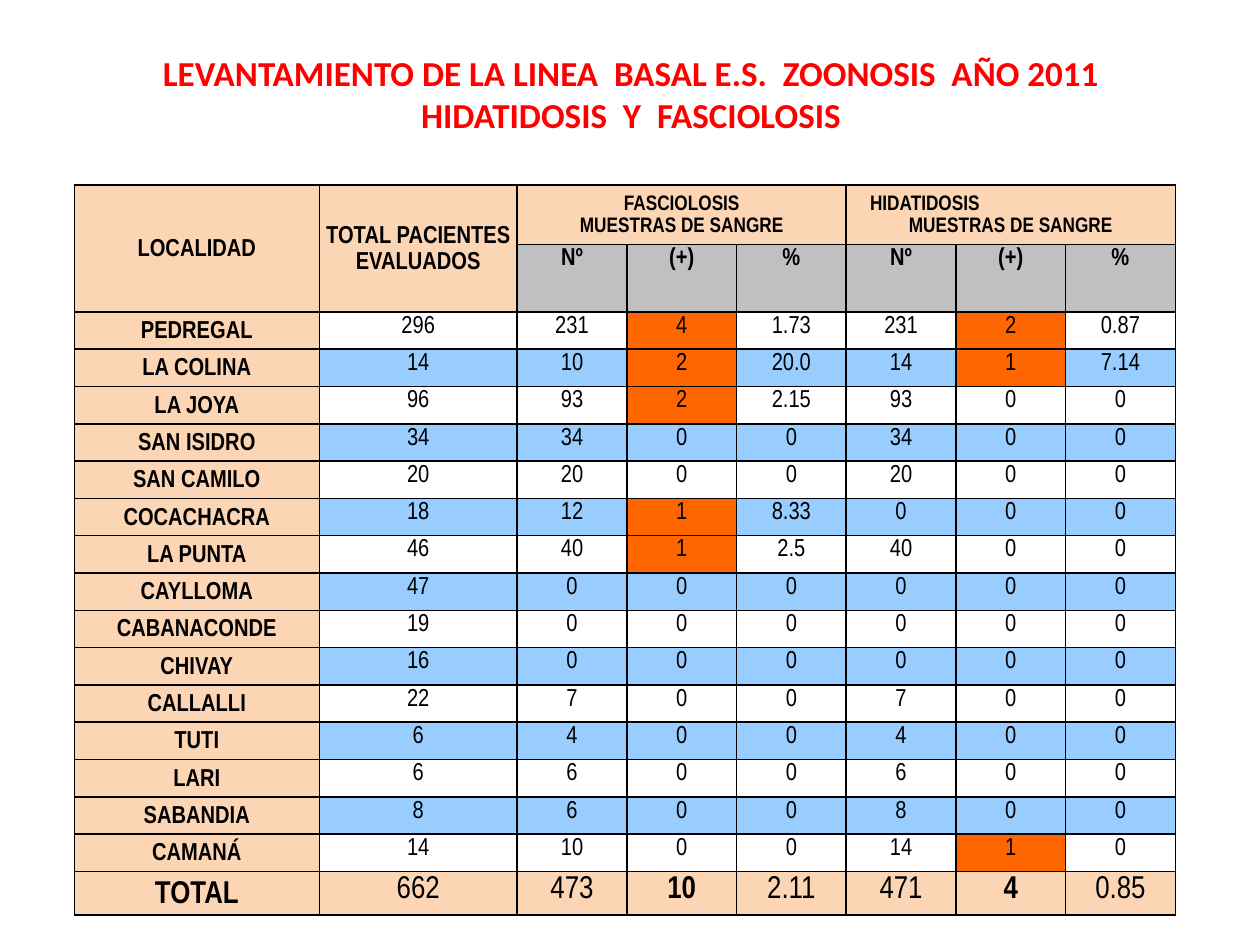
from typing import NamedTuple

from lxml.etree import SubElement
from pptx import Presentation
from pptx.dml.color import RGBColor
from pptx.enum.text import MSO_ANCHOR as Anchor, PP_ALIGN as Align
from pptx.oxml.ns import qn
from pptx.util import Pt

PEACH, GREY, BLUE, ORANGE = "FCD5B5", "C0C0C0", "99CCFF", "FF6600"
BLACK, RED = "000000", "FF0000"
POSITIVE_COLUMNS = (3, 6)


class Locality(NamedTuple):
    name: str
    evaluated: str
    fasciolosis: tuple[str, str, str]
    hidatidosis: tuple[str, str, str]

    def values(self) -> tuple[str, ...]:
        return (self.name, self.evaluated, *self.fasciolosis, *self.hidatidosis)


class Heading(NamedTuple):
    row: int
    column: int
    last_row: int
    last_column: int
    lines: tuple[str, ...]
    size: float


LOCALITIES = [
    Locality("PEDREGAL", "296", ("231", "4", "1.73"), ("231", "2", "0.87")),
    Locality("LA COLINA", "14", ("10", "2", "20.0"), ("14", "1", "7.14")),
    Locality("LA JOYA", "96", ("93", "2", "2.15"), ("93", "0", "0")),
    Locality("SAN ISIDRO", "34", ("34", "0", "0"), ("34", "0", "0")),
    Locality("SAN CAMILO", "20", ("20", "0", "0"), ("20", "0", "0")),
    Locality("COCACHACRA", "18", ("12", "1", "8.33"), ("0", "0", "0")),
    Locality("LA PUNTA", "46", ("40", "1", "2.5"), ("40", "0", "0")),
    Locality("CAYLLOMA", "47", ("0", "0", "0"), ("0", "0", "0")),
    Locality("CABANACONDE", "19", ("0", "0", "0"), ("0", "0", "0")),
    Locality("CHIVAY", "16", ("0", "0", "0"), ("0", "0", "0")),
    Locality("CALLALLI", "22", ("7", "0", "0"), ("7", "0", "0")),
    Locality("TUTI", "6", ("4", "0", "0"), ("4", "0", "0")),
    Locality("LARI", "6", ("6", "0", "0"), ("6", "0", "0")),
    Locality("SABANDIA", "8", ("6", "0", "0"), ("8", "0", "0")),
    Locality("CAMANÁ", "14", ("10", "0", "0"), ("14", "1", "0")),
]
TOTAL = Locality("TOTAL", "662", ("473", "10", "2.11"), ("471", "4", "0.85"))

HEADINGS = [
    Heading(0, 0, 1, 0, ("LOCALIDAD",), 14),
    Heading(0, 1, 1, 1, ("TOTAL PACIENTES EVALUADOS",), 14),
    Heading(0, 2, 0, 4, ("FASCIOLOSIS", "MUESTRAS DE SANGRE"), 12),
    Heading(0, 5, 0, 7, ("HIDATIDOSIS", "MUESTRAS DE SANGRE"), 12),
]

COLUMN_WIDTHS = [140, 113.1] + [62.7] * 6
ROW_HEIGHTS = [33.8, 38.2] + [21.33] * len(LOCALITIES) + [24.6]


def colour(value: str) -> RGBColor:
    return RGBColor.from_string(value)


def write(frame, *lines: str, size: float = 14, font: str = "Arial Narrow",
          fill: str = BLACK, bold: bool = False, spacing: float = 1.15) -> None:
    frame.word_wrap = True
    for index, line in enumerate(lines):
        paragraph = frame.paragraphs[0] if index == 0 else frame.add_paragraph()
        paragraph.alignment = Align.CENTER
        paragraph.line_spacing = spacing
        run = paragraph.add_run()
        run.text = line
        run.font.size = Pt(size)
        run.font.name = font
        run.font.bold = bold
        run.font.color.rgb = colour(fill)


def style_cell(cell, fill: str | None, middle: bool) -> None:
    cell.margin_left = cell.margin_right = Pt(3.6)
    cell.margin_top = cell.margin_bottom = 0
    cell.vertical_anchor = Anchor.MIDDLE if middle else Anchor.TOP
    properties = cell._tc.get_or_add_tcPr()
    for side in ("a:lnL", "a:lnR", "a:lnT", "a:lnB"):
        border = SubElement(properties, qn(side), w=str(Pt(1)))
        SubElement(SubElement(border, qn("a:solidFill")), qn("a:srgbClr"), val=BLACK)
    if fill:
        cell.fill.solid()
        cell.fill.fore_color.rgb = colour(fill)
    else:
        cell.fill.background()


def fill_headings(table) -> None:
    for column in range(len(COLUMN_WIDTHS)):
        style_cell(table.cell(0, column), PEACH, True)
        style_cell(table.cell(1, column), PEACH if column < 2 else GREY, column < 2)
    for heading in HEADINGS:
        cell = table.cell(heading.row, heading.column)
        cell.merge(table.cell(heading.last_row, heading.last_column))
        write(cell.text_frame, *heading.lines, size=heading.size, bold=True)
    hidatidosis = table.cell(0, 5).text_frame.paragraphs[0]
    hidatidosis.alignment = Align.LEFT
    hidatidosis._p.get_or_add_pPr().set("marL", str(Pt(10)))
    for column, label in enumerate(("Nº", "(+)", "%") * 2, start=2):
        write(table.cell(1, column).text_frame, label, bold=True)


def fill_localities(table) -> None:
    for index, locality in enumerate(LOCALITIES):
        for column, value in enumerate(locality.values()):
            if column == 0:
                fill = PEACH
            elif column in POSITIVE_COLUMNS and value != "0":
                fill = ORANGE
            else:
                fill = BLUE if index % 2 else None
            cell = table.cell(index + 2, column)
            style_cell(cell, fill, column == 0)
            write(cell.text_frame, value, bold=column == 0)


def fill_total(table) -> None:
    for column, value in enumerate(TOTAL.values()):
        cell = table.cell(len(ROW_HEIGHTS) - 1, column)
        style_cell(cell, PEACH, column == 0)
        write(cell.text_frame, value, size=18,
              bold=column == 0 or column in POSITIVE_COLUMNS)


def main() -> None:
    deck = Presentation()
    deck.slide_width, deck.slide_height = Pt(720), Pt(540)
    slide = deck.slides.add_slide(deck.slide_layouts[6])

    title = slide.shapes.add_textbox(Pt(36.7), Pt(43.2), Pt(648), Pt(67)).text_frame
    title.vertical_anchor = Anchor.MIDDLE
    title.margin_top, title.margin_bottom = 0, Pt(46.8)
    write(title, "LEVANTAMIENTO DE LA LINEA  BASAL E.S.  ZOONOSIS  AÑO 2011",
          "HIDATIDOSIS  Y  FASCIOLOSIS", size=20, font="Calibri", fill=RED,
          bold=True, spacing=1)

    table = slide.shapes.add_table(
        len(ROW_HEIGHTS), len(COLUMN_WIDTHS), Pt(42.5), Pt(105.8),
        Pt(sum(COLUMN_WIDTHS)), Pt(sum(ROW_HEIGHTS))).table
    table.first_row = table.horz_banding = False
    for column, width in zip(table.columns, COLUMN_WIDTHS):
        column.width = Pt(width)
    for row, height in zip(table.rows, ROW_HEIGHTS):
        row.height = Pt(height)
    fill_headings(table)
    fill_localities(table)
    fill_total(table)

    deck.save("out.pptx")


if __name__ == "__main__":
    main()
